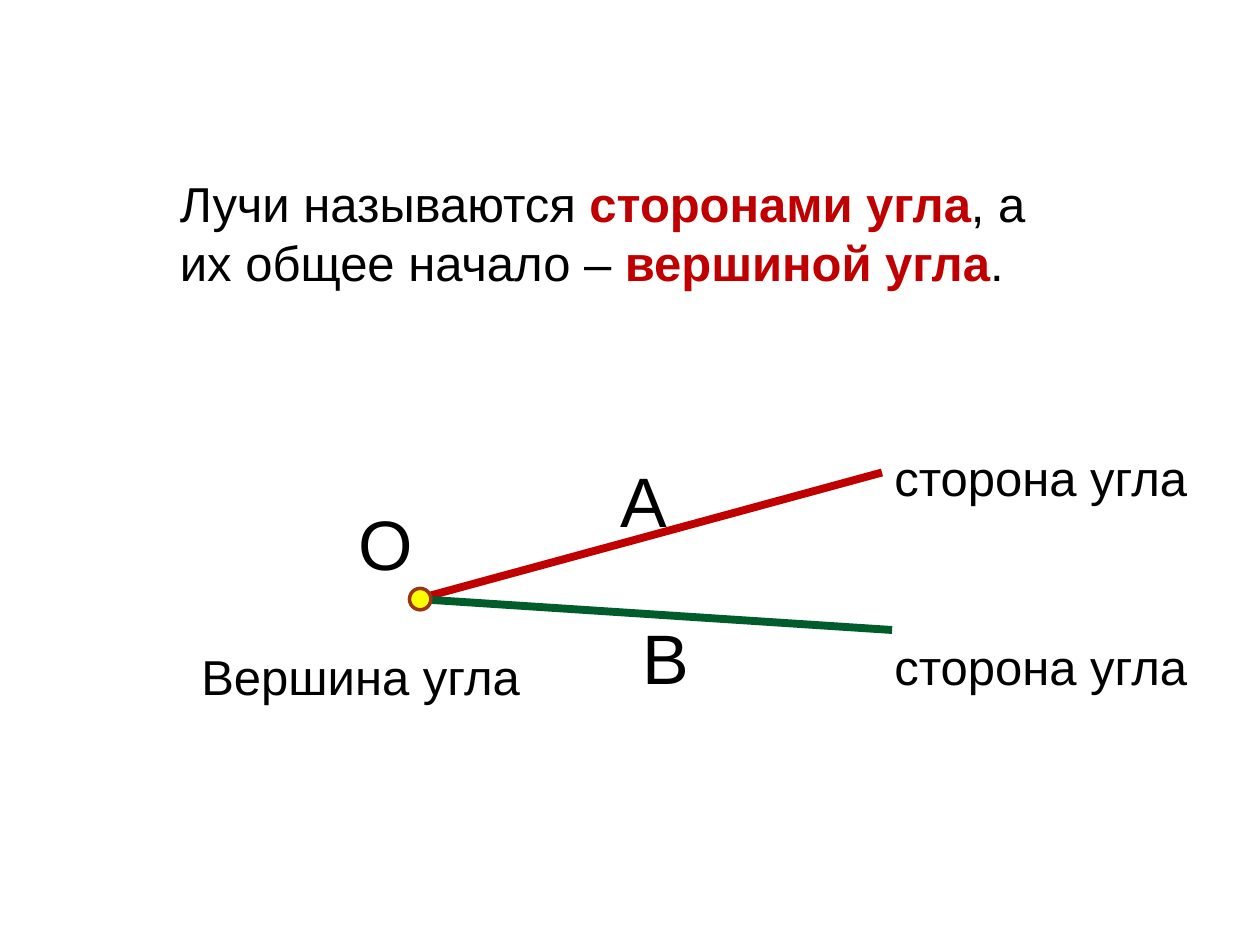
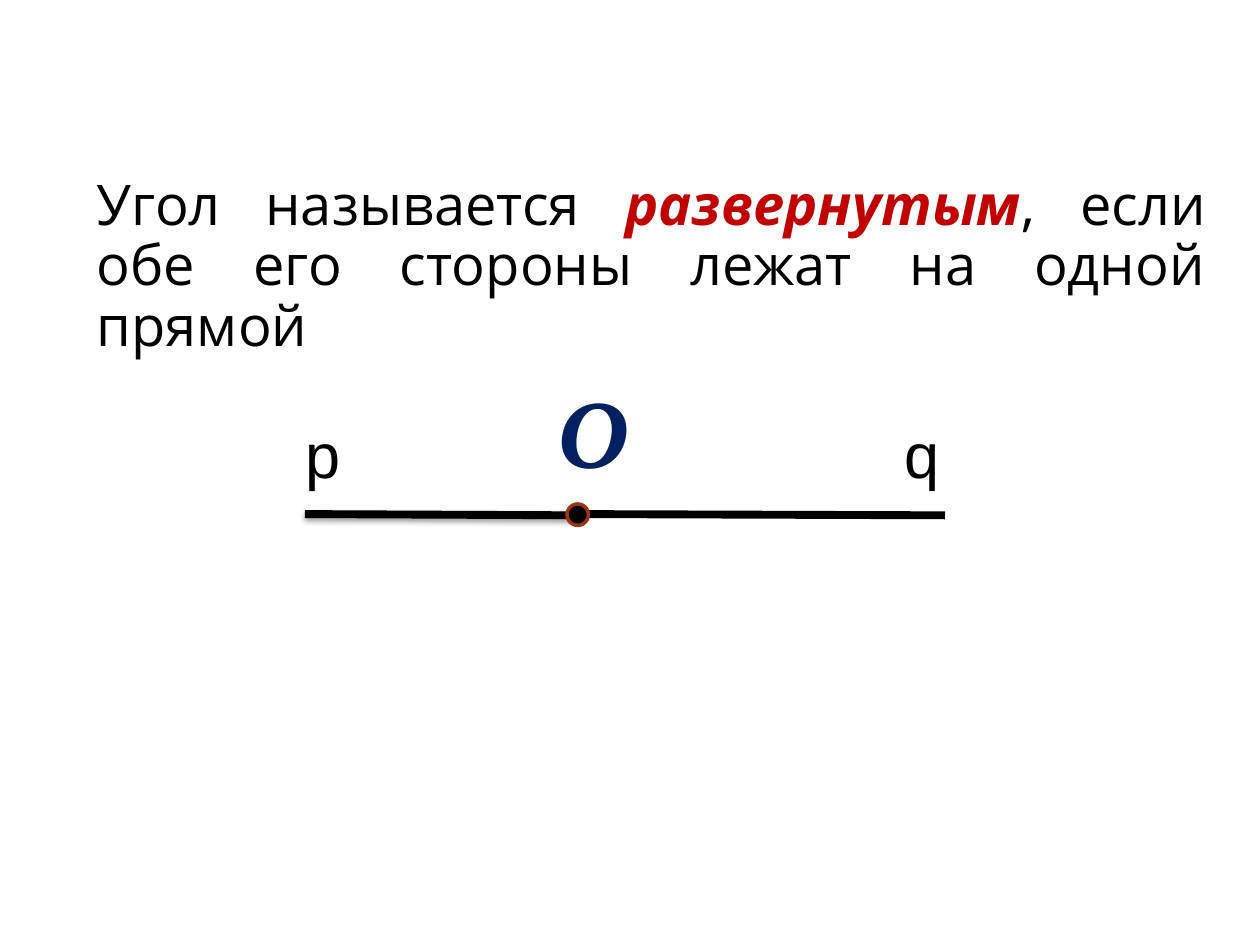
import lxml.etree
import pptx
import pptx.dml.color
import pptx.enum.shapes
import pptx.enum.text
import pptx.oxml.ns
import pptx.util

Inches = pptx.util.Inches
BLACK, RED, GREEN, NAVY = "000000", "C00000", "005C2A", "002060"
YELLOW, BROWN = "FFFF00", "9C3511"
POINT_SIZE = 0.17
TERM = {"bold": True, "color": RED}


def rgb(value):
    return pptx.dml.color.RGBColor.from_string(value)


def add_text(page, place, spans, size, font="Arial", wrap=True):
    """Add a text box; spans are (text, format values) pairs."""
    box = page.shapes.add_textbox(*map(Inches, place))
    box.text_frame.word_wrap = wrap
    paragraph = box.text_frame.paragraphs[0]
    for text, values in spans:
        span = paragraph.add_run()
        span.text = text
        style = {"name": font, "size": pptx.util.Pt(size), "color": BLACK, **values}
        span.font.color.rgb = rgb(style.pop("color"))
        for name, value in style.items():
            setattr(span.font, name, value)
    return box


deck = pptx.Presentation()
deck.slide_width, deck.slide_height = Inches(10), Inches(7.5)
sides_page, straight_page = [deck.slides.add_slide(deck.slide_layouts[6]) for _ in range(2)]

# Rays of both angles: page, start, end, colour, shadow
rays = [
    (sides_page, (3.33, 4.75), (7, 3.75), RED, False),
    (sides_page, (3.25, 4.75), (7.08, 5), GREEN, False),
    (straight_page, (2.42, 4.08), (4.58, 4.09), BLACK, True),
    (straight_page, (4.58, 4.08), (7.5, 4.09), BLACK, False),
]
for page, start, end, color, shadow in rays:
    ray = page.shapes.add_connector(
        pptx.enum.shapes.MSO_CONNECTOR.STRAIGHT, *map(Inches, start + end))
    ray.line.color.rgb = rgb(color)
    ray.line.width = pptx.util.Pt(4.5)
    qn = pptx.oxml.ns.qn
    effects = lxml.etree.SubElement(ray._element.spPr, qn("a:effectLst"))
    if shadow:
        outer = lxml.etree.SubElement(
            effects, qn("a:outerShdw"), blurRad="40000", dist="20000",
            dir="5400000", rotWithShape="0")
        tint = lxml.etree.SubElement(outer, qn("a:srgbClr"), val=BLACK)
        lxml.etree.SubElement(tint, qn("a:alpha"), val="38000")

# Vertex of each angle
for page, left, top, color in [(sides_page, 3.25, 4.67, YELLOW), (straight_page, 4.5, 4, BLACK)]:
    vertex = page.shapes.add_shape(
        pptx.enum.shapes.MSO_SHAPE.OVAL,
        *map(Inches, (left, top, POINT_SIZE, POINT_SIZE)))
    vertex.shadow.inherit = False
    vertex.fill.solid()
    vertex.fill.fore_color.rgb = rgb(color)
    vertex.line.color.rgb = rgb(BROWN)
    vertex.line.width = pptx.util.Pt(2)

# Slide 1: letters and captions
for letter, left, top, width in [("О", 2.75, 3.92, 0.64), ("А", 4.83, 3.58, 1.33), ("В", 5, 4.83, 0.64)]:
    add_text(sides_page, (left, top, width, 0.77), [(letter, {})], 40)
for caption, left, top, width in [
    ("Вершина угла", 1.5, 5.08, 2.76),
    ("сторона угла", 7, 5, 2.56),
    ("сторона угла", 7, 3.5, 2.56),
]:
    add_text(sides_page, (left, top, width, 0.57), [(caption, {})], 28, wrap=False)

# Slide 1: definition
add_text(sides_page, (1.33, 1.33, 7.33, 1.04), [
    ("Лучи называются ", {}),
    ("сторонами угла", TERM),
    (", а их общее начало – ", {}),
    ("вершиной угла", TERM),
    (".", {}),
], 28)

# Slide 2: definition
definition = add_text(straight_page, (0.67, 1.5, 9, 1.25), [
    ("Угол называется ", {}),
    ("развернутым", {**TERM, "italic": True}),
    (", если обе его стороны лежат на одной прямой", {}),
], 32, "Open Sans")
definition.text_frame.vertical_anchor = pptx.enum.text.MSO_ANCHOR.MIDDLE
definition.text_frame.paragraphs[0].alignment = pptx.enum.text.PP_ALIGN.JUSTIFY
definition.text_frame.paragraphs[0].line_spacing = 0.9

# Slide 2: letters
add_text(straight_page, (4.33, 2.92, 0.75, 1.01),
         [("О", {"bold": True, "italic": True, "color": NAVY})], 54, "Vollkorn", wrap=False)
for letter, left in [("p", 2.33), ("q", 7.08)]:
    add_text(straight_page, (left, 3.25, 0.48, 0.71), [(letter, {})], 36, wrap=False)

deck.save("out.pptx")
